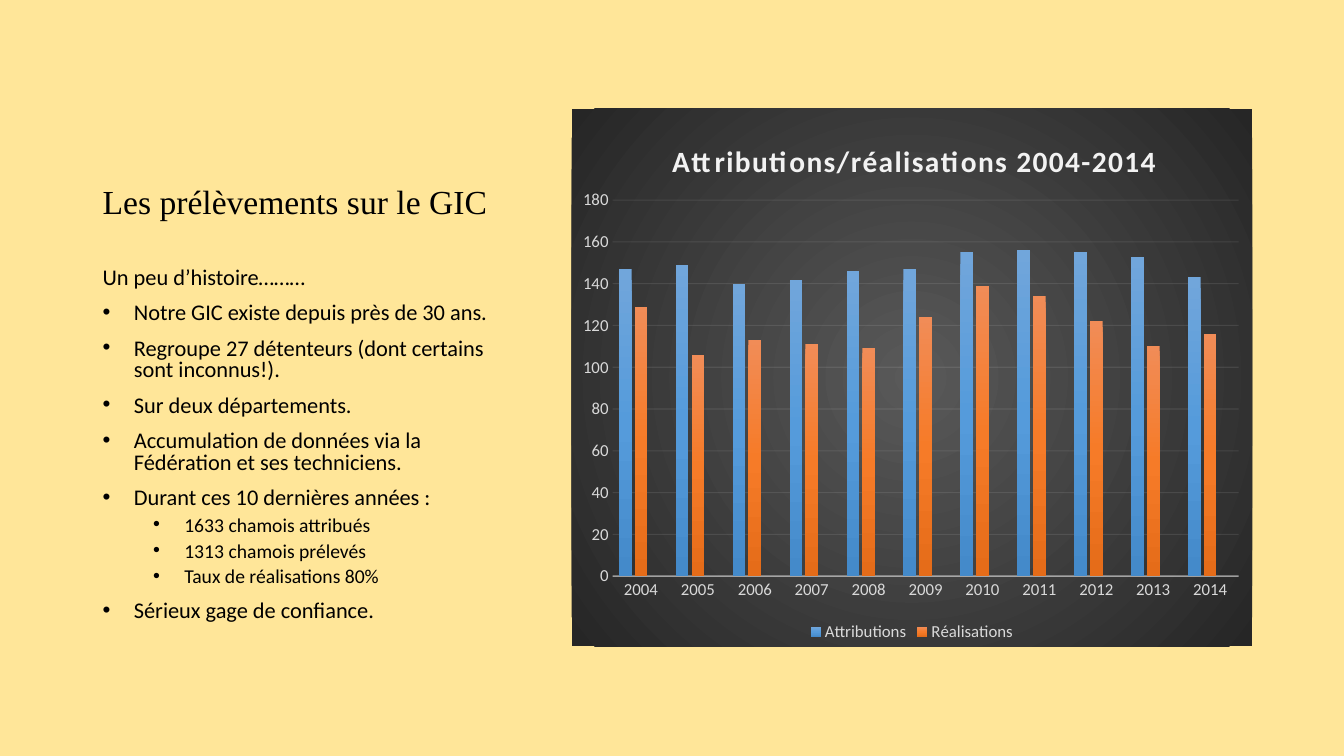
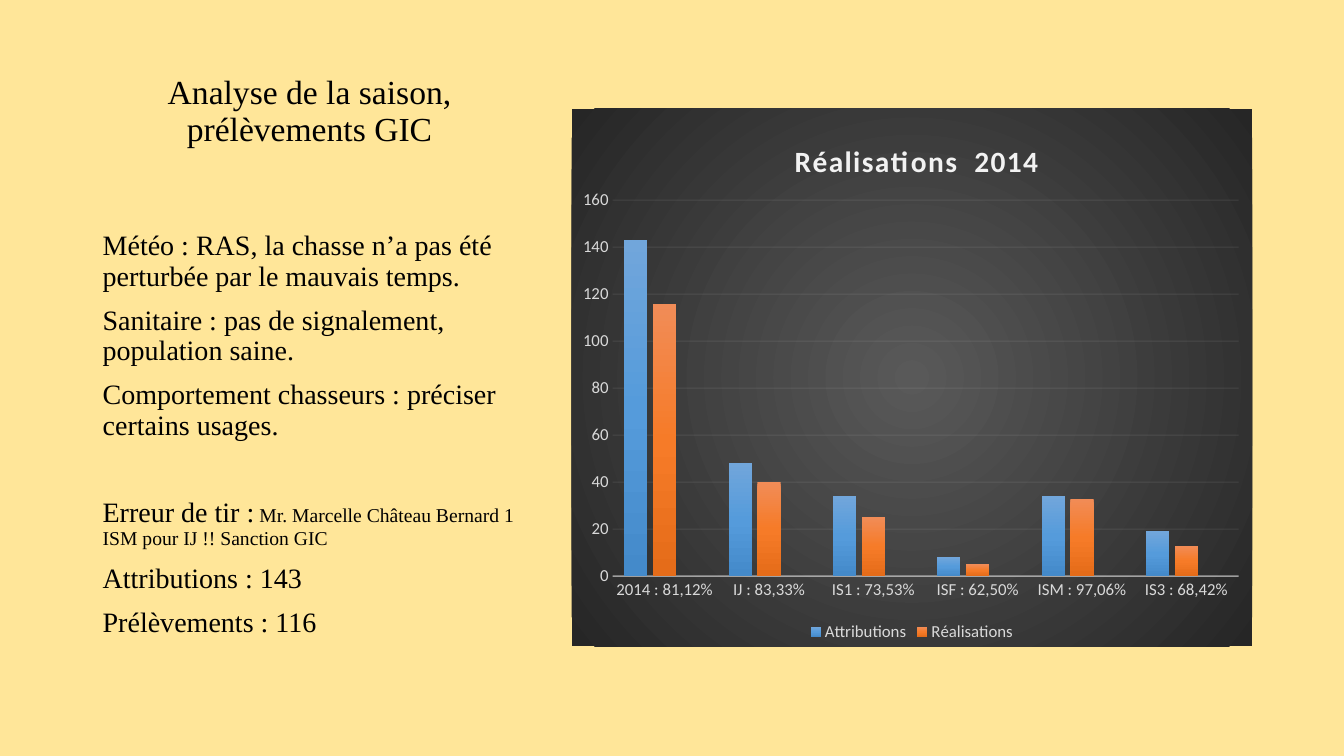
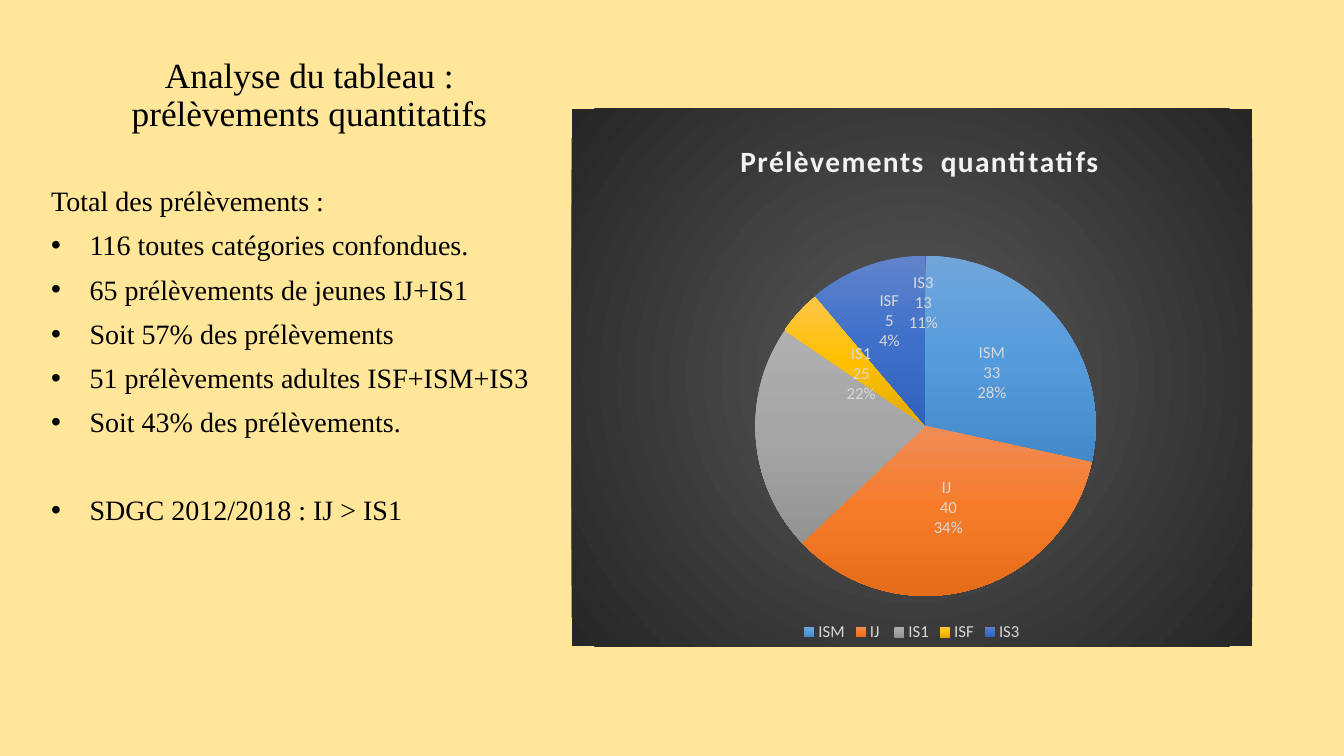
from copy import deepcopy

from lxml import etree
from pptx import Presentation
from pptx.chart.data import CategoryChartData
from pptx.dml.color import RGBColor
from pptx.enum.chart import XL_CHART_TYPE, XL_LABEL_POSITION, XL_LEGEND_POSITION, XL_TICK_MARK
from pptx.enum.text import MSO_ANCHOR, PP_ALIGN
from pptx.oxml import parse_xml
from pptx.oxml.ns import qn
from pptx.util import Inches, Pt

COLUMNS, PIE = XL_CHART_TYPE.COLUMN_CLUSTERED, XL_CHART_TYPE.PIE
LEFT, CENTER = PP_ALIGN.LEFT, PP_ALIGN.CENTER
NO_TICK = XL_TICK_MARK.NONE

COLORS = {
    "page": "FFE699",
    "text": "000000",
    "chart_title": "F2F2F2",
    "chart_text": "D9D9D9",
    "chart_line": "F2F2F2",
}
PANEL = ("595959", "262626")
GRADIENTS = {
    "blue": ("71A6DB", "559BDB", "448ACA"),
    "orange": ("F18C57", "F67B28", "E56C19"),
    "grey": ("AFAFAF", "A5A5A5", "939393"),
    "gold": ("FFC64B", "FFC000", "E3AB00"),
    "indigo": ("6183CB", "3E70CA", "3062BB"),
}
SERIF, SANS = "Times New Roman", "Calibri"
DRAWING_NS = "http://schemas.openxmlformats.org/drawingml/2006/main"

# Boxes: left, top, width, height in inches
TEXT_LEFT, TEXT_WIDTH, TITLE_TOP, TEXT_BOTTOM = 0.92, 4.3, 0.5, 6.42
CHART_BOX = (5.67, 1.08, 6.75, 5.33)
# Plot areas and labels: shares of the chart
COLUMN_PLOT = (0.06, 0.17, 0.92, 0.7)
PIE_PLOT = (0.27, 0.27, 0.5, 0.64)
TITLE_SHARE = 0.05
LABEL_SHIFTS = {2: (0.03, -0.11), 3: (0.04, -0.09), 4: (0.04, -0.08)}


def rgb(name):
    return RGBColor.from_string(COLORS[name])


def set_font(font, size, color, face, bold=False):
    font.size, font.name, font.bold = Pt(size), face, bold
    font.color.rgb = rgb(color)


# ---------- text ----------

def add_text_box(slide, box, anchor):
    frame = slide.shapes.add_textbox(*map(Inches, box)).text_frame
    frame.word_wrap = True
    frame.vertical_anchor = anchor
    return frame


def add_title(slide, text, height, size=24, align=CENTER):
    box = (TEXT_LEFT, TITLE_TOP, TEXT_WIDTH, height)
    para = add_text_box(slide, box, MSO_ANCHOR.BOTTOM).paragraphs[0]
    para.text, para.alignment, para.line_spacing = text, align, 0.9
    set_font(para.font, size, "text", SERIF)


def add_bullet(para, indent, hanging):
    props = para._p.get_or_add_pPr()
    props.set("marL", str(Inches(indent)))
    props.set("indent", str(-Inches(hanging)))
    etree.SubElement(props, qn("a:buFont"), typeface="Arial")
    etree.SubElement(props, qn("a:buChar"), char="•")


def add_body(slide, box, rows, face, size, spacing=0.9, hanging=0.38):
    """Rows are (kind, text, space before); kind is plain, bullet or sub."""
    frame = add_text_box(slide, box, MSO_ANCHOR.TOP)
    for index, (kind, text, before) in enumerate(rows):
        para = frame.paragraphs[0] if index == 0 else frame.add_paragraph()
        para.line_spacing, para.space_before = spacing, Pt(before)
        set_font(para.font, 14 if kind == "sub" else size, "text", face)
        if kind != "plain":
            add_bullet(para, hanging + 0.5 * (kind == "sub"), hanging)
        lead, separator, detail = text.partition("|")
        para.add_run().text = lead
        if separator:
            span = para.add_run()
            span.text, span.font.size = detail, Pt(14)


# ---------- charts ----------

def gradient(stops, radial=False):
    last = len(stops) - 1
    marks = "".join(
        f'<a:gs pos="{100000 * i // last}"><a:srgbClr val="{stop}"/></a:gs>'
        for i, stop in enumerate(stops))
    center = '<a:fillToRect l="50000" t="50000" r="50000" b="50000"/>'
    direction = (f'<a:path path="circle">{center}</a:path>' if radial
                 else '<a:lin ang="5400000" scaled="0"/>')
    return parse_xml(f'<a:gradFill xmlns:a="{DRAWING_NS}" rotWithShape="1">'
                     f'<a:gsLst>{marks}</a:gsLst>{direction}</a:gradFill>')


def paint(part, color):
    part.format._element.get_or_add_spPr().insert(0, gradient(GRADIENTS[color]))


def style_line(part, width, opacity):
    """Draw the line of an axis or of its grid, partly transparent."""
    line = part.format.line
    line.color.rgb, line.width = rgb("chart_line"), Pt(width)
    color = part.format._element.get_or_add_spPr().find(".//" + qn("a:srgbClr"))
    etree.SubElement(color, qn("a:alpha"), val=str(opacity * 1000))


def place(parent, index, shares, edge=True, inner=False):
    """Give a chart part a fixed place, in shares of the chart."""
    for old in parent.findall(qn("c:layout")):
        parent.remove(old)
    layout = etree.Element(qn("c:layout"))
    manual = etree.SubElement(layout, qn("c:manualLayout"))
    values = [("layoutTarget", "inner")] if inner else []
    if edge:
        values += [("xMode", "edge"), ("yMode", "edge")]
    values += zip("xywh", map(str, shares))
    for tag, value in values:
        etree.SubElement(manual, qn("c:" + tag), val=value)
    parent.insert(index, layout)


def add_panel_chart(slide, kind, title, title_left, categories, series, plot_shares):
    """Add a chart with its dark panel, title and legend."""
    data = CategoryChartData()
    data.categories = categories
    for name, values in series:
        data.add_series(name, values)
    chart = slide.shapes.add_chart(kind, *map(Inches, CHART_BOX), data).chart
    set_font(chart.font, 12, "chart_text", SANS)
    panel = etree.Element(qn("c:spPr"))
    panel.append(gradient(PANEL, radial=True))
    line = etree.SubElement(panel, qn("a:ln"))
    etree.SubElement(line, qn("a:noFill"))
    chart._chartSpace.find(qn("c:txPr")).addprevious(panel)

    chart.has_title = True
    para = chart.chart_title.text_frame.paragraphs[0]
    para.text = title
    set_font(para.font, 21, "chart_title", SANS, bold=True)
    para.font._element.set("spc", "100")
    place(chart.chart_title._element, 1, (title_left, TITLE_SHARE))

    chart.has_legend = True
    chart.legend.position = XL_LEGEND_POSITION.BOTTOM
    chart.legend.include_in_layout = False
    set_font(chart.legend.font, 12, "chart_text", SANS)
    place(chart._chartSpace.find(".//" + qn("c:plotArea")), 0, plot_shares, inner=True)
    return chart


def add_column_chart(slide, title, title_left, categories, granted, taken, top):
    series = [("Attributions", granted), ("Réalisations", taken),
              ("Series 3", [None] * len(categories))]
    chart = add_panel_chart(slide, COLUMNS, title, title_left, categories, series, COLUMN_PLOT)
    plot = chart.plots[0]
    plot.gap_width, plot.overlap, plot.vary_by_categories = 100, -24, False
    for part, color in zip(plot.series, GRADIENTS):
        paint(part, color)

    for axis in (chart.category_axis, chart.value_axis):
        axis.major_tick_mark = axis.minor_tick_mark = NO_TICK
        set_font(axis.tick_labels.font, 12, "chart_text", SANS)
    style_line(chart.category_axis, 1, 54)
    values = chart.value_axis
    values.minimum_scale, values.maximum_scale, values.major_unit = 0, top, 20
    values.format.line.fill.background()
    style_line(values.major_gridlines, 0.75, 10)

    entry = etree.Element(qn("c:legendEntry"))
    etree.SubElement(entry, qn("c:idx"), val="2")
    etree.SubElement(entry, qn("c:delete"), val="1")
    chart.legend._element.find(qn("c:legendPos")).addnext(entry)


def add_pie_chart(slide, title, title_left, categories, values):
    chart = add_panel_chart(slide, PIE, title, title_left, categories,
                            [("Series 1", values)], PIE_PLOT)
    pie = chart.plots[0].series[0]
    for index, color in enumerate(GRADIENTS):
        paint(pie.points[index], color)

    labels = pie.data_labels
    set_font(labels.font, 12, "chart_text", SANS)
    labels.position = XL_LABEL_POSITION.CENTER
    labels.show_value = labels.show_percentage = labels.show_category_name = True
    root = labels._element
    separator = etree.Element(qn("c:separator"))
    separator.text = "\n"
    root.find(qn("c:showBubbleSize")).addnext(separator)
    shared = [part for part in root if part.tag != qn("c:showLeaderLines")]
    for position, (index, shift) in enumerate(LABEL_SHIFTS.items()):
        label = etree.Element(qn("c:dLbl"))
        etree.SubElement(label, qn("c:idx"), val=str(index))
        place(label, 1, shift, edge=False)
        label.extend(deepcopy(part) for part in shared)
        root.insert(position, label)


# ---------- slides ----------

def build_history(slide):
    add_title(slide, "Les prélèvements sur le GIC", 1.75, align=LEFT)
    rows = [
        ("plain", "Un peu d’histoire………", 10),
        ("bullet", "Notre GIC existe depuis près de 30 ans.", 10),
        ("bullet", "Regroupe 27 détenteurs (dont certains sont inconnus!).", 10),
        ("bullet", "Sur deux départements.", 10),
        ("bullet", "Accumulation de données via la Fédération et ses techniciens.", 10),
        ("bullet", "Durant ces 10 dernières années :", 10),
        ("sub", "1633 chamois attribués", 5),
        ("sub", "1313 chamois prélevés", 5),
        ("sub", "Taux de réalisations 80%", 5),
        ("bullet", "Sérieux gage de confiance.", 10),
    ]
    top = 2.61
    add_body(slide, (TEXT_LEFT, top, TEXT_WIDTH, TEXT_BOTTOM - top), rows,
             SANS, 16, spacing=0.8, hanging=0.31)
    add_column_chart(
        slide, "Attributions/réalisations 2004-2014", 0.14,
        [str(year) for year in range(2004, 2015)],
        [147, 149, 140, 142, 146, 147, 155, 156, 155, 153, 143],
        [129, 106, 113, 111, 109, 124, 139, 134, 122, 110, 116], 180)


def build_season(slide):
    add_title(slide, "Analyse de la saison, prélèvements GIC", 1.02)
    add_column_chart(
        slide, "Réalisations  2014", 0.32,
        ["2014 : 81,12%", "IJ : 83,33%", "IS1 : 73,53%",
         "ISF : 62,50%", "ISM : 97,06%", "IS3 : 68,42%"],
        [143, 48, 34, 8, 34, 19], [116, 40, 25, 5, 33, 13], 160)
    rows = [
        ("plain", "Météo : RAS, la chasse n’a pas été perturbée par le mauvais temps.", 10),
        ("plain", "Sanitaire : pas de signalement, population saine.", 10),
        ("plain", "Comportement chasseurs : préciser certains usages.", 10),
        ("plain", "Erreur de tir :| Mr. Marcelle Château Bernard 1 ISM pour IJ !! Sanction GIC", 41),
        ("plain", "Attributions : 143", 10),
        ("plain", "Prélèvements : 116", 10),
    ]
    top = 2.25
    add_body(slide, (TEXT_LEFT, top, TEXT_WIDTH, TEXT_BOTTOM - top), rows, SERIF, 20)


def build_quantities(slide):
    add_title(slide, "Analyse du tableau : prélèvements quantitatifs", 0.88, size=25.2)
    add_pie_chart(slide, "Prélèvements  quantitatifs", 0.24,
                  ["ISM", "IJ ", "IS1", "ISF", "IS3"], [33, 40, 25, 5, 13])
    rows = [
        ("plain", "Total des prélèvements :", 10),
        ("bullet", "116 toutes catégories confondues.", 10),
        ("bullet", "65 prélèvements de jeunes IJ+IS1", 10),
        ("bullet", "Soit 57% des prélèvements", 10),
        ("bullet", "51 prélèvements adultes ISF+ISM+IS3", 10),
        ("bullet", "Soit 43% des prélèvements.", 10),
        ("bullet", "SDGC 2012/2018 : IJ > IS1", 41),
    ]
    top = 1.81
    add_body(slide, (0.41, top, 5, TEXT_BOTTOM - top), rows, SERIF, 20)


def main():
    deck = Presentation()
    deck.slide_width, deck.slide_height = Inches(13.33), Inches(7.5)
    page = deck.slide_masters[0].background.fill
    page.solid()
    page.fore_color.rgb = rgb("page")
    for build in (build_history, build_season, build_quantities):
        build(deck.slides.add_slide(deck.slide_layouts[6]))
    deck.save("out.pptx")


if __name__ == "__main__":
    main()
